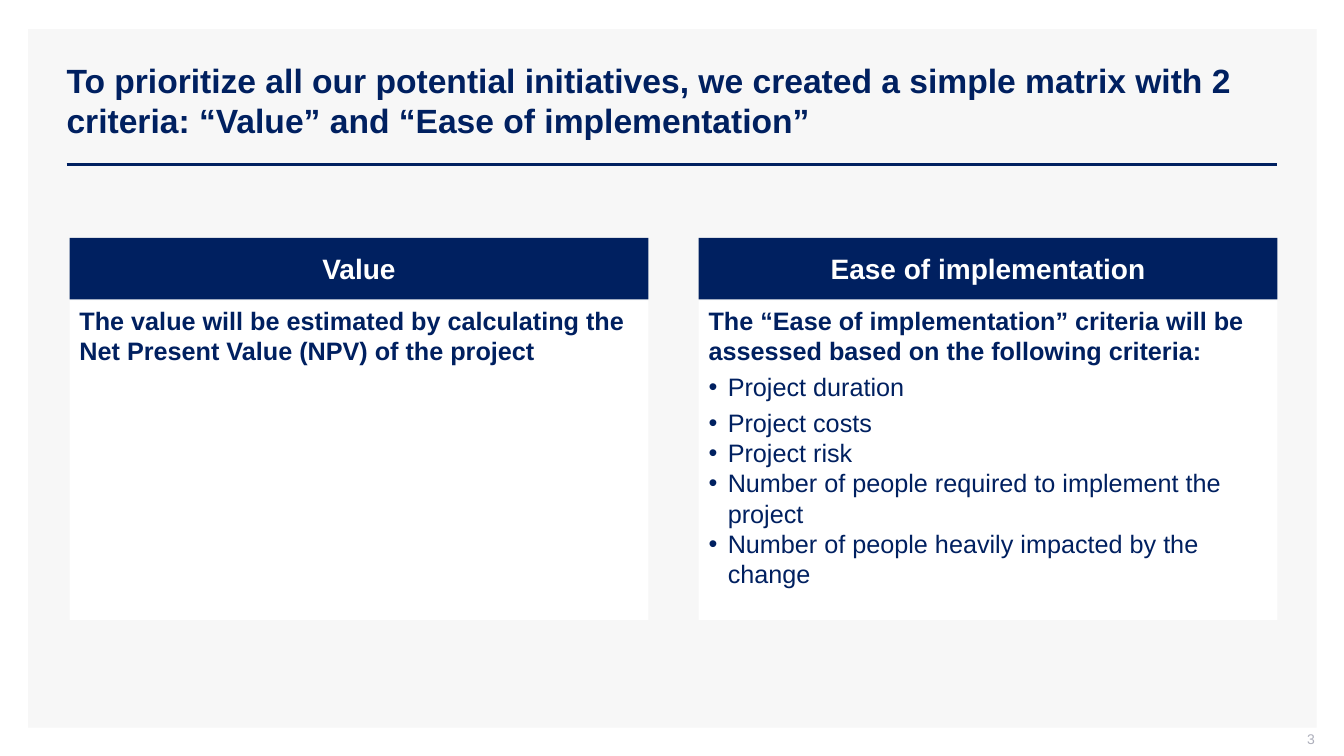
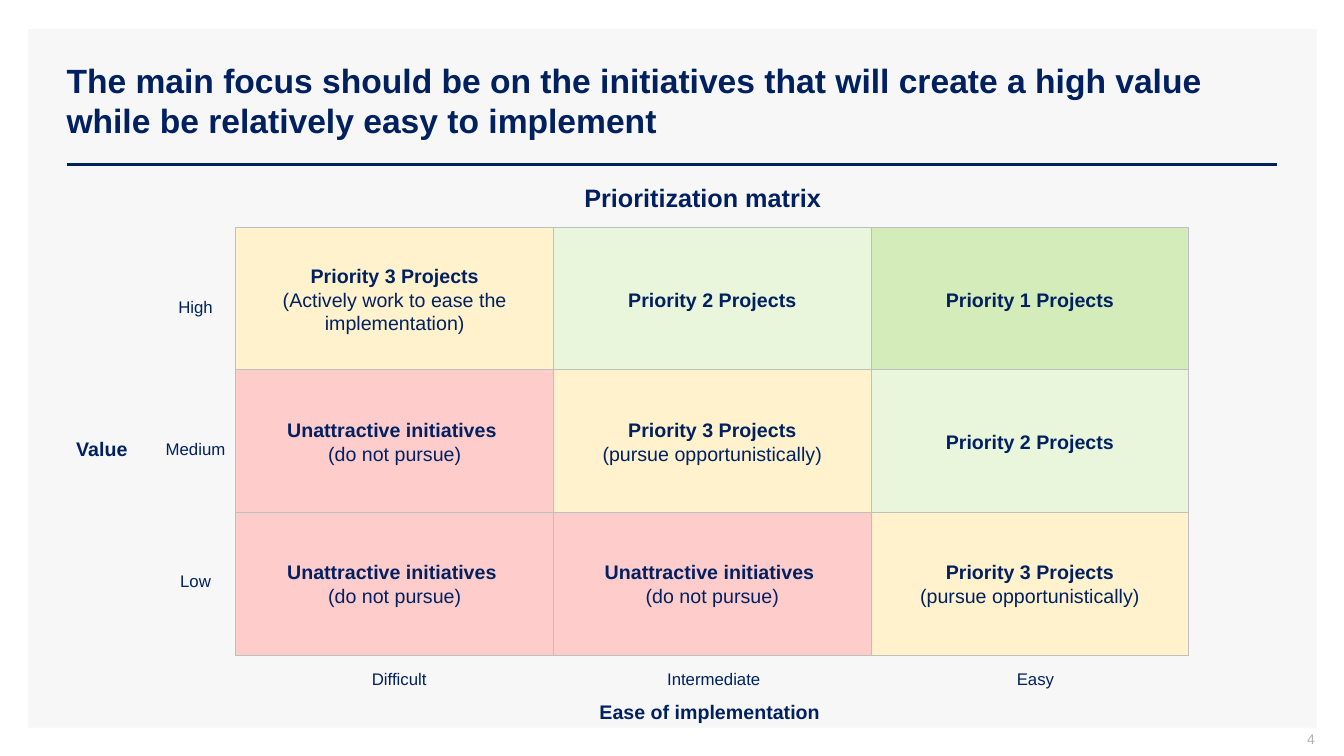
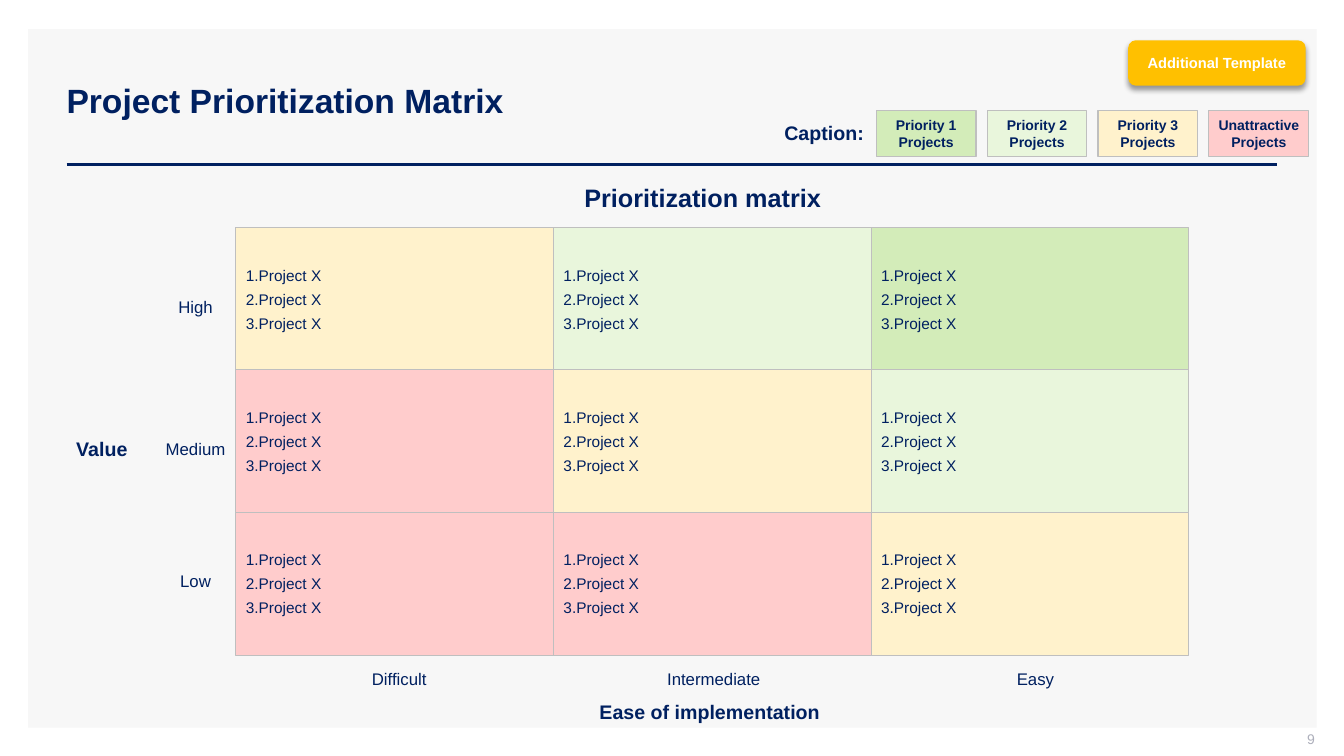
import dataclasses

import lxml.etree
import pptx
import pptx.dml.color
import pptx.enum.shapes
import pptx.enum.text
import pptx.oxml.ns
import pptx.util

Inches = pptx.util.Inches
Pt = pptx.util.Pt
Align = pptx.enum.text.PP_ALIGN
Anchor = pptx.enum.text.MSO_ANCHOR
Shape = pptx.enum.shapes.MSO_SHAPE
color_of = pptx.dml.color.RGBColor.from_string
qn = pptx.oxml.ns.qn


@dataclasses.dataclass(frozen=True)
class Theme:
    font: str = "Arial"
    navy: str = "002060"
    white: str = "FFFFFF"
    panel: str = "F7F7F7"
    border: str = "BFBFBF"
    page_number: str = "ADAFBB"
    badge: str = "FFC000"
    priority_1: str = "D3ECB9"
    priority_2: str = "E9F6DC"
    priority_3: str = "FFF2CC"
    unattractive: str = "FFCCCC"
    title_size: float = 24
    header_size: float = 20
    body_size: float = 18
    cell_size: float = 14
    label_size: float = 12
    list_size: float = 11
    badge_size: float = 10.5
    small_size: float = 10


theme = Theme()


def add_box(page, bounds, paragraphs=(), size=theme.cell_size, fill=None, border=None,
            color=theme.navy, align=Align.CENTER, anchor=Anchor.MIDDLE,
            margins=(0.1, 0.05, 0.1, 0.05), kind=Shape.RECTANGLE):
    """Add a filled shape, or a text box without fill.

    Each paragraph is a list of lines, and each line a (text, bold) pair.
    """
    lengths = [Inches(value) for value in bounds]
    if fill:
        box = page.shapes.add_shape(kind, *lengths)
        box.shadow.inherit = False
        box.fill.solid()
        box.fill.fore_color.rgb = color_of(fill)
        if border:
            box.line.color.rgb = color_of(border)
            box.line.width = Pt(0.75)
        else:
            box.line.fill.background()
    else:
        box = page.shapes.add_textbox(*lengths)
    frame = box.text_frame
    frame.word_wrap = True
    frame.vertical_anchor = anchor
    frame.margin_left, frame.margin_top, frame.margin_right, frame.margin_bottom = [
        Inches(value) for value in margins]
    for index, lines in enumerate(paragraphs):
        para = frame.add_paragraph() if index else frame.paragraphs[0]
        para.alignment = align
        for line_index, (text, bold) in enumerate(lines):
            if line_index:
                para.add_line_break()
            span = para.add_run()
            span.text = text
            span.font.name = theme.font
            span.font.size = Pt(size)
            span.font.bold = bold
            span.font.color.rgb = color_of(color)
    return box


def add_bullet(para, indent, tag, **attributes):
    """Give a paragraph a hanging indent and a bullet element."""
    properties = para._p.get_or_add_pPr()
    properties.set("marL", str(Inches(indent)))
    properties.set("indent", str(-Inches(indent)))
    bullet_font = lxml.etree.SubElement(properties, qn("a:buFont"))
    bullet_font.set("typeface", theme.font)
    lxml.etree.SubElement(properties, qn(tag), **attributes)


deck = pptx.Presentation()
deck.slide_width = Inches(13.33)
deck.slide_height = Inches(7.5)
layout = deck.slide_layouts[5]
layout_title = layout.placeholders[0]
layout_title.left, layout_title.top = Inches(0.56), Inches(0.4)
layout_title.width, layout_title.height = Inches(12.11), Inches(1.19)

# Titles and page numbers
titles = [
    (3, "To prioritize all our potential initiatives, we created a simple matrix with 2 "
        "criteria: “Value” and “Ease of implementation”"),
    (4, "The main focus should be on the initiatives that will create a high value "
        "while be relatively easy to implement"),
    (9, "Project Prioritization Matrix"),
]
pages = []
for number, title_text in titles:
    page = deck.slides.add_slide(layout)
    pages.append(page)
    frame = page.shapes.title.text_frame
    frame.word_wrap = True
    frame.auto_size = pptx.enum.text.MSO_AUTO_SIZE.NONE
    frame.vertical_anchor = Anchor.MIDDLE
    para = frame.paragraphs[0]
    para.alignment = Align.LEFT
    span = para.add_run()
    span.text = title_text
    span.font.name = theme.font
    span.font.size = Pt(theme.title_size)
    span.font.bold = True
    span.font.color.rgb = color_of(theme.navy)
    add_box(page, (10.04, 7.25, 3, 0.21), [[(str(number), False)]], theme.small_size,
            color=theme.page_number, align=Align.RIGHT, margins=(0.1, 0, 0, 0.05))
criteria_page, focus_page, template_page = pages

# Panel and title rule, moved to the layout so that every slide shows them
panel = add_box(criteria_page, (0.28, 0.29, 12.78, 6.93), fill=theme.panel)
rule = criteria_page.shapes.add_connector(
    pptx.enum.shapes.MSO_CONNECTOR.STRAIGHT,
    Inches(0.66), Inches(1.63), Inches(12.67), Inches(1.63))
rule.line.color.rgb = color_of(theme.navy)
rule.line.width = Pt(2)
lxml.etree.SubElement(rule.element.spPr, qn("a:effectLst"))
for shared in (panel, rule):
    layout_title.element.addprevious(shared.element)

# Criteria slide
criteria = [
    ("Value", "The value will be estimated by calculating the Net Present Value (NPV) "
              "of the project", []),
    ("Ease of implementation",
     "The “Ease of implementation” criteria will be assessed based on the following criteria:",
     ["Project duration", "Project costs", "Project risk",
      "Number of people required to implement the project",
      "Number of people heavily impacted by the change"]),
]
for index, (heading, lead, points) in enumerate(criteria):
    left = 0.69 + index * 6.24
    add_box(criteria_page, (left, 2.36, 5.74, 0.61), [[(heading, True)]],
            theme.header_size, fill=theme.navy, color=theme.white)
    body = add_box(criteria_page, (left, 2.98, 5.74, 3.17),
                   [[(lead, True)]] + [[(point, False)] for point in points],
                   theme.body_size, fill=theme.white, align=Align.LEFT, anchor=Anchor.TOP)
    bullets = body.text_frame.paragraphs[1:]
    for para in bullets:
        add_bullet(para, 0.19, "a:buChar", char="•")
    if bullets:
        bullets[0].space_before = bullets[0].space_after = Pt(4)

# Matrix slides
ease_work = "(Actively work to ease the implementation)"
opportunistic = "(pursue opportunistically)"
first = ("Priority 1 Projects", theme.priority_1, None)
second = ("Priority 2 Projects", theme.priority_2, None)
third = ("Priority 3 Projects", theme.priority_3, opportunistic)
third_hard = ("Priority 3 Projects", theme.priority_3, ease_work)
unattractive = ("Unattractive initiatives ", theme.unattractive, "(do not pursue)")
matrix = [
    [third_hard, second, first],
    [unattractive, third, second],
    [unattractive, unattractive, third],
]
# Text, centre x, centre y, width, size, bold
axis_labels = [
    ("Value", 1.01, 4.45, 0.92, theme.cell_size, True),
    ("High", 1.94, 3.04, 0.9, theme.label_size, False),
    ("Medium", 1.94, 4.45, 0.9, theme.label_size, False),
    ("Low", 1.94, 5.76, 0.9, theme.label_size, False),
    ("Difficult", 3.96, 6.73, 1.4, theme.label_size, False),
    ("Intermediate", 7.08, 6.73, 1.4, theme.label_size, False),
    ("Easy", 10.27, 6.73, 1.4, theme.label_size, False),
    ("Ease of implementation", 7.04, 7.06, 2.6, theme.cell_size, True),
]
for page in (focus_page, template_page):
    add_box(page, (4.94, 1.81, 4.06, 0.3), [[("Prioritization matrix", True)]],
            theme.body_size, margins=(0.08, 0, 0.08, 0))
    for text, center_x, center_y, width, size, bold in axis_labels:
        add_box(page, (center_x - width / 2, center_y - 0.15, width, 0.3),
                [[(text, bold)]], size)
    for row, cells in enumerate(matrix):
        for column, (name, fill, advice) in enumerate(cells):
            bounds = (2.34 + column * 3.15, 2.26 + row * 1.41, 3.15, 1.42)
            if page is focus_page:
                lines = [(name, True)]
                if advice:
                    lines.append((advice, False))
                add_box(page, bounds, [lines], fill=fill, border=theme.border)
                continue
            cell = add_box(page, bounds, [[("Project X", False)]] * 3, theme.list_size,
                           fill=fill, border=theme.border, align=Align.LEFT)
            for index, para in enumerate(cell.text_frame.paragraphs):
                add_bullet(para, 0.12, "a:buAutoNum", type="arabicPeriod")
                if index:
                    para.space_before = Pt(4)

# Caption and badge on the template slide
add_box(template_page, (7.68, 1.15, 1.02, 0.34), [[("Caption:", True)]], align=Align.LEFT)
captions = [
    ("Priority 1 Projects", theme.priority_1),
    ("Priority 2 Projects", theme.priority_2),
    ("Priority 3 Projects", theme.priority_3),
    ("Unattractive Projects", theme.unattractive),
]
for index, (text, fill) in enumerate(captions):
    add_box(template_page, (8.69 + index * 1.1, 1.1, 0.99, 0.45), [[(text, True)]],
            theme.small_size, fill=fill, border=theme.border,
            margins=(0.04, 0.05, 0.04, 0.05))

badge = add_box(template_page, (11.19, 0.4, 1.76, 0.45), [[("Additional Template", True)]],
                theme.badge_size, fill=theme.badge, color=theme.white,
                kind=Shape.ROUNDED_RECTANGLE)
shadow = lxml.etree.SubElement(
    badge.element.spPr.find(qn("a:effectLst")), qn("a:outerShdw"),
    blurRad=str(Pt(4)), dist=str(Pt(3)), dir="5400000", algn="t", rotWithShape="0")
shadow_color = lxml.etree.SubElement(shadow, qn("a:srgbClr"), val="000000")
lxml.etree.SubElement(shadow_color, qn("a:alpha"), val="40000")

deck.save("out.pptx")
